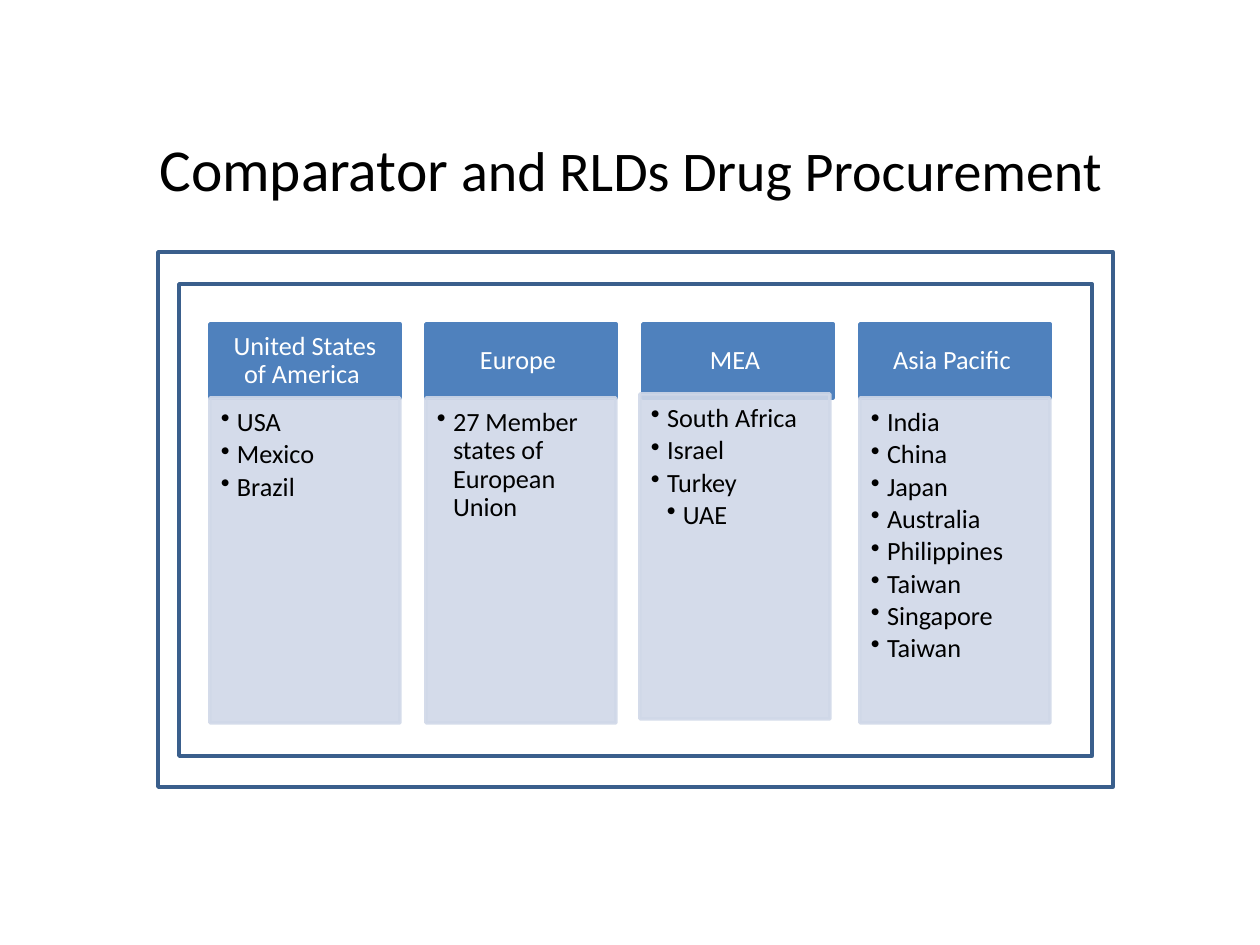
import pptx
import pptx.util
import pptx.dml.color
import pptx.enum.shapes
import pptx.enum.text
import pptx.oxml
import pptx.oxml.ns

COLORS = {"white": "FFFFFF", "black": "000000", "frame": "3A5F8C",
          "header": "4F81BD", "body": "D0D8E8"}
PX = pptx.util.Inches(1) / 126
TEXT = pptx.enum.text


class SlideBuilder:
    font = "Calibri"
    size = 15
    header_format = {"alignment": TEXT.PP_ALIGN.CENTER, "line_spacing": 0.9,
                     "space_after": pptx.util.Pt(5.25)}
    bullet_format = {"alignment": TEXT.PP_ALIGN.LEFT, "line_spacing": 0.9,
                     "space_after": pptx.util.Pt(2.25)}

    def __init__(self, slide):
        self.slide = slide

    def px(self, *lengths):
        return [round(length * PX) for length in lengths]

    def color(self, name):
        return pptx.dml.color.RGBColor.from_string(COLORS[name])

    def apply(self, target, values):
        for name, value in values.items():
            setattr(target, name, value)

    def span(self, para, text, color, size):
        span = para.add_run()
        span.text = text
        self.apply(span.font, {"name": self.font, "size": pptx.util.Pt(size)})
        span.font.color.rgb = self.color(color)

    def insets(self, frame, left, top, right, bottom):
        names = ("margin_left", "margin_top", "margin_right", "margin_bottom")
        self.apply(frame, dict(zip(names, self.px(left, top, right, bottom))))

    def rectangle(self, bounds, fill, line, opacity=100):
        kind = pptx.enum.shapes.MSO_SHAPE.RECTANGLE
        box = self.slide.shapes.add_shape(kind, *self.px(*bounds))
        box.shadow.inherit = False
        box.fill.solid()
        box.fill.fore_color.rgb = self.color(fill)
        box.line.color.rgb = self.color(line)
        box.line.width = pptx.util.Pt(2)
        if opacity < 100:
            for color in box.element.spPr.iter(pptx.oxml.ns.qn("a:srgbClr")):
                alpha = color.makeelement(pptx.oxml.ns.qn("a:alpha"),
                                          {"val": str(opacity * 1000)})
                color.append(alpha)
        return box

    def title(self, bounds, spans):
        box = self.slide.shapes.add_textbox(*self.px(*bounds))
        self.apply(box.text_frame, {"word_wrap": False,
                                    "auto_size": TEXT.MSO_AUTO_SIZE.SHAPE_TO_FIT_TEXT})
        for text, size in spans:
            self.span(box.text_frame.paragraphs[0], text, "black", size)

    def header(self, bounds, text):
        frame = self.rectangle(bounds, "header", "header").text_frame
        self.apply(frame, {"word_wrap": True,
                           "vertical_anchor": TEXT.MSO_ANCHOR.MIDDLE})
        self.insets(frame, 15, 9, 15, 9)
        para = frame.paragraphs[0]
        self.apply(para, self.header_format)
        self.span(para, text, "white", self.size)

    def bullets(self, bounds, items):
        frame = self.rectangle(bounds, "body", "body", 90).text_frame
        self.apply(frame, {"word_wrap": True,
                           "vertical_anchor": TEXT.MSO_ANCHOR.TOP})
        self.insets(frame, 11, 11, 15, 16)
        for index, (text, level) in enumerate(items):
            para = frame.add_paragraph() if index else frame.paragraphs[0]
            self.apply(para, {**self.bullet_format, "level": level})
            indent = self.px(16)[0]
            properties = para._p.get_or_add_pPr()
            properties.set("marL", str(indent * level))
            properties.set("indent", str(-indent))
            bullet = properties.makeelement(pptx.oxml.ns.qn("a:buChar"), {"char": "•"})
            properties.append(bullet)
            self.span(para, text, "black", self.size)


# Each region: heading, bulleted (country, level) items, shift of its list
REGIONS = [
    ("United States of America ", [("USA", 1), ("Mexico", 1), ("Brazil", 1)], (0, 0)),
    ("Europe ", [("27 Member states of European Union", 1)], (0, 0)),
    ("MEA ", [("South Africa", 1), ("Israel", 1), ("Turkey", 1), ("UAE", 2)], (-3, -4)),
    ("Asia Pacific ", [(country, 1) for country in (
        "India", "China", "Japan", "Australia", "Philippines", "Taiwan",
        "Singapore", "Taiwan")], (0, 0)),
]


def main():
    deck = pptx.Presentation()
    deck.slide_width = pptx.util.Inches(10)
    deck.slide_height = pptx.util.Inches(7.5)
    builder = SlideBuilder(deck.slides.add_slide(deck.slide_layouts[6]))

    # Double frame
    for bounds in ((158, 252, 955, 535), (179, 284, 913, 472)):
        builder.rectangle(bounds, "white", "frame")

    # Title
    builder.title((147, 126, 978, 84),
                  [("Comparator", 34), (" and RLDs Drug Procurement", 32)])

    # Region columns
    left, top, width, step = 210, 324, 190, 216.5
    header_height, body_height = 74, 325
    for index, (heading, items, (dx, dy)) in enumerate(REGIONS):
        x = round(left + index * step)
        builder.header((x, top, width, header_height), heading)
        builder.bullets((x + dx, top + header_height + dy, width, body_height), items)

    deck.save("out.pptx")


if __name__ == "__main__":
    main()
